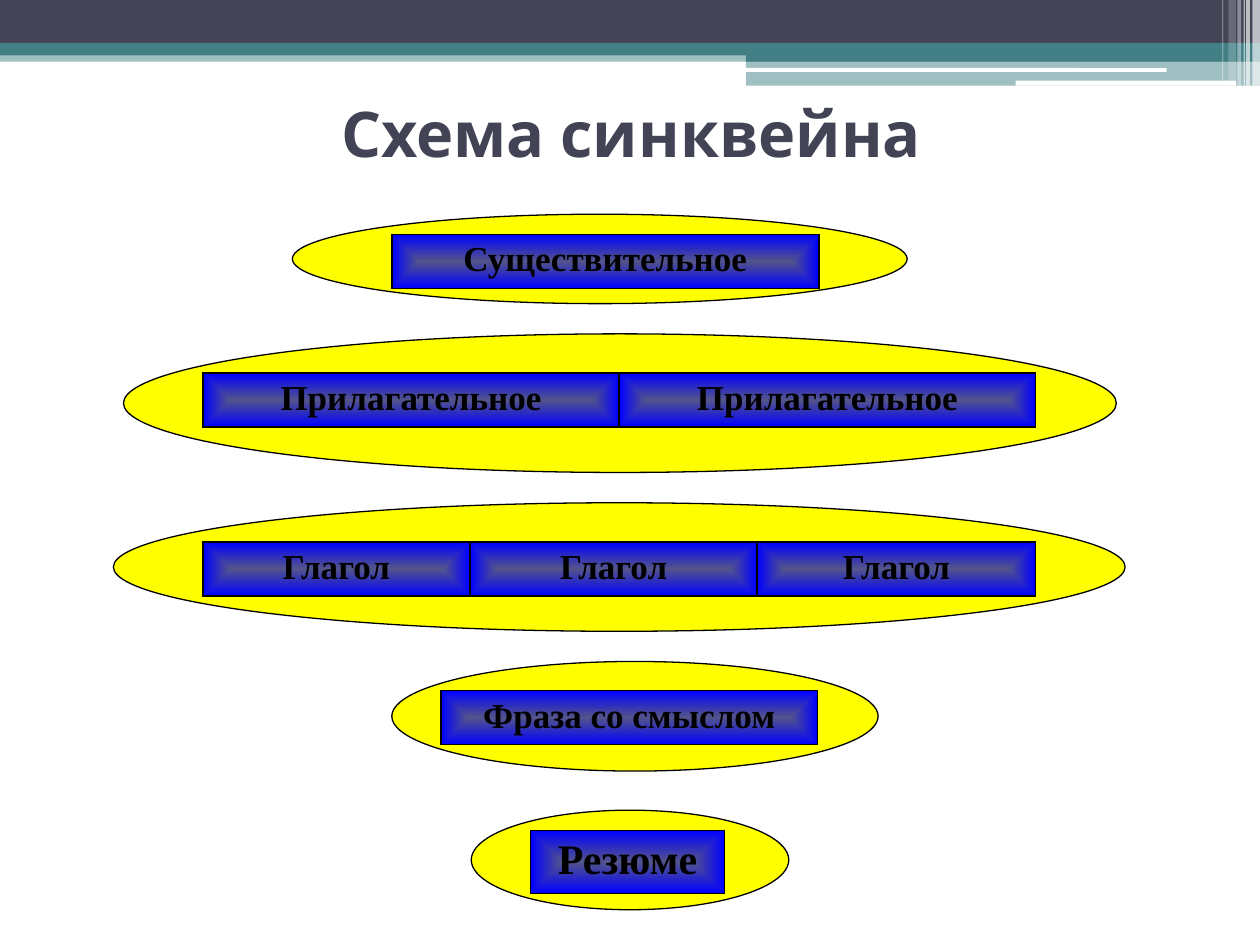
from dataclasses import dataclass
from typing import NamedTuple

from lxml.etree import SubElement
from pptx import Presentation
from pptx.dml.color import RGBColor
from pptx.enum.shapes import MSO_SHAPE
from pptx.enum.text import MSO_ANCHOR, PP_ALIGN
from pptx.oxml import parse_xml
from pptx.oxml.ns import nsdecls, qn
from pptx.util import Inches, Pt

# The slide is a grid of 100 columns by 75 rows
WIDE, HIGH = Inches(10), Inches(7.5)
COL, ROW = WIDE / 100, HIGH / 75

HUES = {
    "dark": "424456", "teal": "438086", "white": "FFFFFF", "black": "000000",
    "yellow": "FFFF00", "blue": "0000FF", "slate": "53548A",
}


class Box(NamedTuple):
    x: float
    y: float
    w: float
    h: float

    def place(self) -> tuple[int, ...]:
        units = (COL, ROW, COL, ROW)
        return tuple(round(n * unit) for n, unit in zip(self, units))


@dataclass
class Band:
    box: Box
    hue: str
    alpha: int = 100
    kind: MSO_SHAPE = MSO_SHAPE.RECTANGLE


@dataclass
class Step:
    oval: Box
    grid: Box
    words: list[str]
    cols: list[float]
    size: int = 20


ROUND = MSO_SHAPE.ROUNDED_RECTANGLE
BANDS = [
    Band(Box(0, 4, 100, 0.9), "teal", 50),
    Band(Box(0, 0, 100, 3.4), "dark"),
    Band(Box(0, 3.4, 100, 1), "teal"),
    Band(Box(59.2, 3.9, 40.8, 1), "teal"),
    Band(Box(59.2, 4.8, 40.8, 2), "teal", 50),
    Band(Box(59.1, 5.4, 33.5, 0.3), "white", kind=ROUND),
    Band(Box(80.6, 6.4, 17.5, 0.4), "white", kind=ROUND),
]
# Stripes at the right edge: column, width, height, opacity
BANDS += [
    Band(Box(x, 0, w, h), "white", alpha)
    for x, w, h, alpha in [
        (99.4, 0.6, 6.8, 65), (98.9, 0.3, 6.8, 65), (98.7, 0.1, 6.8, 60),
        (98.2, 0.3, 6.8, 40), (97.5, 0.6, 6.4, 20), (97, 0.1, 6.4, 30),
    ]
]

STEPS = [
    Step(Box(23.2, 17, 48.8, 7.1), Box(31.1, 18.6, 33.9, 4.3),
         ["Существительное"], [33.9]),
    Step(Box(9.8, 26.5, 78.8, 11), Box(16.1, 29.6, 66.1, 4.3),
         ["Прилагательное"] * 2, [33.05] * 2),
    Step(Box(9, 39.9, 80.3, 10.2), Box(16.1, 43, 66.1, 4.3),
         ["Глагол"] * 3, [21.2, 22.8, 22.1]),
    Step(Box(31.1, 52.5, 38.6, 8.7), Box(35, 54.8, 29.9, 4.3),
         ["Фраза со смыслом"], [29.9]),
    Step(Box(37.4, 64.3, 25.2, 7.9), Box(42.1, 65.9, 15.4, 5),
         ["Резюме"], [15.4], 24),
]


def tint(hue: str) -> RGBColor:
    return RGBColor.from_string(HUES[hue])


def form(item, values: dict) -> None:
    for name, value in values.items():
        setattr(item, name, value)


def write(frame, text: str, face: str, size: int, hue: str) -> None:
    frame.text = text
    para = frame.paragraphs[0]
    para.alignment = PP_ALIGN.CENTER
    form(para.font, {"name": face, "size": Pt(size), "bold": True})
    para.font.color.rgb = tint(hue)


def draw(slide, kind: MSO_SHAPE, box: Box, hue: str):
    shape = slide.shapes.add_shape(kind, *box.place())
    shape.shadow.inherit = False
    shape.fill.solid()
    shape.fill.fore_color.rgb = tint(hue)
    shape.line.fill.background()
    return shape


def add_band(slide, band: Band) -> None:
    shape = draw(slide, band.kind, band.box, band.hue)
    if band.alpha < 100:
        shade = next(shape._element.spPr.iter(qn("a:srgbClr")))
        SubElement(shade, qn("a:alpha"), val=str(band.alpha * 1000))


def add_oval(slide, box: Box) -> None:
    oval = draw(slide, MSO_SHAPE.OVAL, box, "yellow")
    oval.line.color.rgb = tint("black")
    oval.line.width = Pt(0.75)


def paint(cell) -> None:
    """Give a cell its borders and its gradient from the centre."""
    props = cell._tc.get_or_add_tcPr()
    for side in "LRTB":
        props.append(parse_xml(
            f'<a:ln{side} {nsdecls("a")} w="{Pt(1)}"><a:solidFill>'
            f'<a:srgbClr val="{HUES["black"]}"/></a:solidFill></a:ln{side}>'))
    stops = "".join(
        f'<a:gs pos="{pos}"><a:srgbClr val="{HUES[hue]}"/></a:gs>'
        for pos, hue in [(0, "slate"), (100000, "blue")])
    props.append(parse_xml(
        f'<a:gradFill {nsdecls("a")} rotWithShape="0"><a:gsLst>{stops}</a:gsLst>'
        '<a:path path="shape"><a:fillToRect l="50000" t="50000" r="50000" '
        'b="50000"/></a:path></a:gradFill>'))


def add_grid(slide, step: Step) -> None:
    frame = slide.shapes.add_table(1, len(step.words), *step.grid.place())
    table = frame.table
    form(table, {"first_row": False, "horz_banding": False})
    for col, width in zip(table.columns, step.cols):
        col.width = round(width * COL)
    for cell, word in zip(table.rows[0].cells, step.words):
        write(cell.text_frame, word, "Times New Roman", step.size, "black")
        paint(cell)


def add_title(slide, text: str) -> None:
    title = slide.shapes.title
    sides = ("left", "top", "width", "height")
    form(title, dict(zip(sides, Box(5.1, 7, 90, 7).place())))
    frame = title.text_frame
    form(frame, {"word_wrap": True, "vertical_anchor": MSO_ANCHOR.MIDDLE})
    write(frame, text, "Karla", 36, "dark")


def main() -> None:
    deck = Presentation()
    form(deck, {"slide_width": WIDE, "slide_height": HIGH})
    slide = deck.slides.add_slide(deck.slide_layouts[5])
    # Header
    for band in BANDS:
        add_band(slide, band)
    add_title(slide, "Схема синквейна")
    # Steps of the poem
    for step in STEPS:
        add_oval(slide, step.oval)
        add_grid(slide, step)
    deck.save("out.pptx")


if __name__ == "__main__":
    main()
